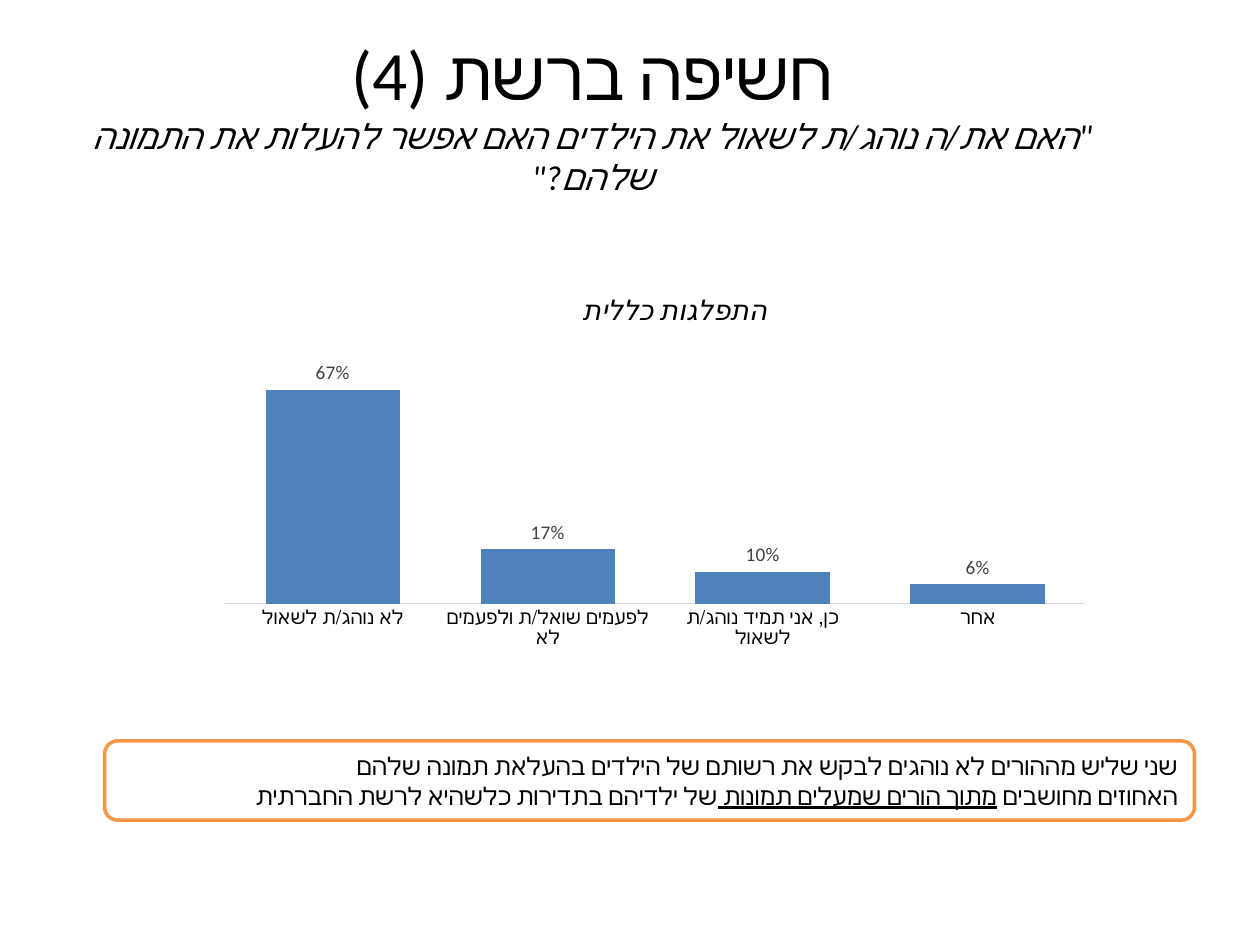
from dataclasses import dataclass

import pptx
import pptx.chart.data
import pptx.dml.color
import pptx.enum.chart
import pptx.enum.shapes
import pptx.enum.text
import pptx.oxml
import pptx.oxml.ns
import pptx.util
from pptx.util import Inches

ALIGN = pptx.enum.text.PP_ALIGN
QN = pptx.oxml.ns.qn


def rgb(value):
    return pptx.dml.color.RGBColor.from_string(value)


@dataclass
class Theme:
    font: str = "Calibri"
    text: str = "000000"
    paper: str = "FFFFFF"
    frame: str = "F79646"
    bar: str = "4F81BD"
    label: str = "404040"
    axis: str = "D9D9D9"
    title: float = 39.6
    question: float = 19.8
    chart_title: float = 16
    note: float = 14
    chart: float = 11


class Deck:
    def __init__(self, theme):
        self.theme = theme
        self.prs = pptx.Presentation()
        self.prs.slide_width, self.prs.slide_height = Inches(10), Inches(7.5)
        self.s = self.prs.slides.add_slide(self.prs.slide_layouts[6])

    def style(self, font, size, color=None):
        font.name = self.theme.font
        font.size = pptx.util.Pt(size)
        font.color.rgb = rgb(color or self.theme.text)

    def add_run(self, p, text, size):
        r = p.add_run()
        r.text = text
        self.style(r.font, size)
        # Hebrew takes its typeface from the complex-script slot
        cs = pptx.oxml.parse_xml(
            f'<a:cs {pptx.oxml.ns.nsdecls("a")} typeface="{self.theme.font}"/>')
        r.font._element.append(cs)
        return r

    def rtl(self, p, align):
        p.alignment = align
        p._p.get_or_add_pPr().set("rtl", "1")

    def heading(self, box, title, question):
        tf = self.s.shapes.add_textbox(*map(Inches, box)).text_frame
        tf.word_wrap = True
        tf.vertical_anchor = pptx.enum.text.MSO_ANCHOR.MIDDLE
        tf.margin_bottom = Inches(0.72)
        p = tf.paragraphs[0]
        self.rtl(p, ALIGN.CENTER)
        self.add_run(p, title, self.theme.title)
        p.add_line_break()
        self.add_run(p, question, self.theme.question).font.italic = True

    def note(self, box, lines):
        """Each line is a list of (text, underlined) pairs."""
        sp = self.s.shapes.add_shape(
            pptx.enum.shapes.MSO_SHAPE.ROUNDED_RECTANGLE, *map(Inches, box))
        sp.shadow.inherit = False
        sp.fill.solid()
        sp.fill.fore_color.rgb = rgb(self.theme.paper)
        sp.line.color.rgb = rgb(self.theme.frame)
        sp.line.width = pptx.util.Pt(2)
        tf = sp.text_frame
        tf.word_wrap = True
        tf.vertical_anchor = pptx.enum.text.MSO_ANCHOR.MIDDLE
        for i, line in enumerate(lines):
            p = tf.add_paragraph() if i else tf.paragraphs[0]
            self.rtl(p, ALIGN.RIGHT)
            for text, underlined in line:
                r = self.add_run(p, text, self.theme.note)
                if underlined:
                    r.font.underline = True

    def layout(self, parent, index, **place):
        """Place a chart part by fractions of the chart area."""
        old = parent.find(QN("c:layout"))
        if old is not None:
            parent.remove(old)
        target = '<c:layoutTarget val="inner"/>' if "w" in place else ""
        modes = "".join(f'<c:{k}Mode val="edge"/>' for k in "xy")
        values = "".join(f'<c:{k} val="{v}"/>' for k, v in place.items())
        parent.insert(index, pptx.oxml.parse_xml(
            f'<c:layout {pptx.oxml.ns.nsdecls("c")}><c:manualLayout>'
            f'{target}{modes}{values}</c:manualLayout></c:layout>'))

    def bar_chart(self, box, title, values):
        t, ec = self.theme, pptx.enum.chart
        data = pptx.chart.data.CategoryChartData(number_format="###0%")
        data.categories = list(values)
        data.add_series("Series 1", list(values.values()))
        chart = self.s.shapes.add_chart(
            ec.XL_CHART_TYPE.COLUMN_CLUSTERED, *map(Inches, box), data).chart
        self.style(chart.font, 10)
        chart.has_legend = False

        # Chart title and plot area
        chart.has_title = True
        p = chart.chart_title.text_frame.paragraphs[0]
        self.rtl(p, ALIGN.CENTER)
        r = self.add_run(p, title, t.chart_title)
        r.font.italic, r.font.bold = True, False
        self.layout(chart.chart_title._element, 1, x=0.43, y=0.05)
        self.layout(chart._chartSpace.chart.plotArea, 0,
                    x=0.035, y=0.197, w=0.964, h=0.597)

        # Axes
        cat, val = chart.category_axis, chart.value_axis
        cat.major_tick_mark = cat.minor_tick_mark = ec.XL_TICK_MARK.NONE
        cat.format.line.color.rgb = rgb(t.axis)
        cat.format.line.width = pptx.util.Pt(0.75)
        self.style(cat.tick_labels.font, t.chart)
        val.visible = val.has_major_gridlines = False
        val.minimum_scale, val.maximum_scale = 0, 0.8

        # Bars and their labels
        plot = chart.plots[0]
        plot.vary_by_categories = False
        plot.gap_width, plot.overlap = 60, -12
        fill = plot.series[0].format.fill
        fill.solid()
        fill.fore_color.rgb = rgb(t.bar)
        labels = plot.series[0].data_labels
        labels.show_value = True
        labels.number_format = "###0%"
        labels.number_format_is_linked = False
        labels.position = ec.XL_LABEL_POSITION.OUTSIDE_END
        self.style(labels.font, t.chart, t.label)


def main():
    deck = Deck(Theme())
    deck.heading(
        (0.2, 0.62, 9, 1.25), "חשיפה ברשת (4)",
        '"האם את/ה נוהג/ת לשאול את הילדים האם אפשר להעלות את התמונה שלהם?"')
    deck.note((0.83, 5.88, 8.65, 0.63), [
        [("שני שליש מההורים לא נוהגים לבקש את רשותם של הילדים בהעלאת תמונה שלהם", False)],
        [("האחוזים מחושבים ", False),
         ("מתוך הורים שמעלים תמונות ", True),
         ("של ילדיהם בתדירות כלשהיא לרשת החברתית", False)],
    ])
    deck.bar_chart((1.54, 2.1, 7.08, 3.39), "התפלגות כללית", {
        "לא נוהג/ת לשאול": 0.67,
        "לפעמים שואל/ת ולפעמים לא": 0.17,
        "כן, אני תמיד נוהג/ת לשאול": 0.10,
        "אחר": 0.06,
    })
    deck.prs.save("out.pptx")


if __name__ == "__main__":
    main()
